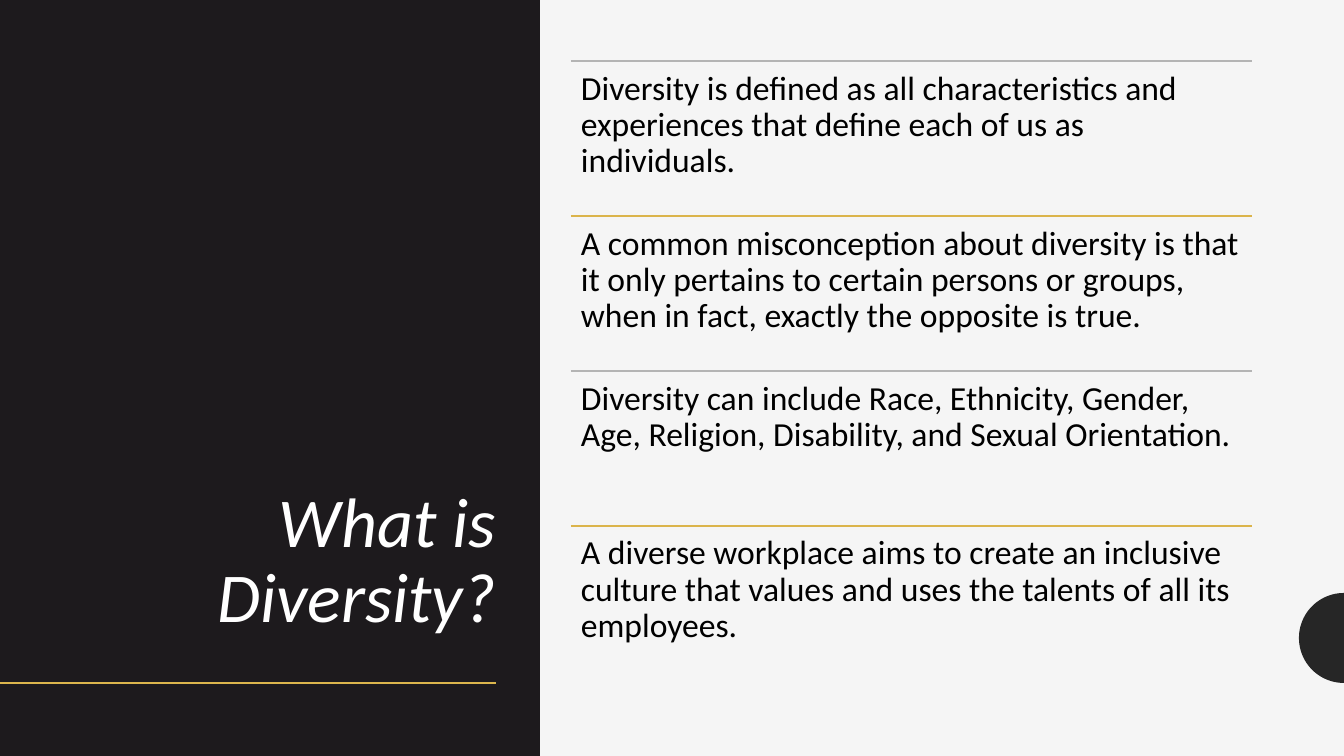
from dataclasses import dataclass
from math import cos, pi, sin

from lxml.etree import SubElement
from pptx import Presentation
from pptx.dml.color import RGBColor
from pptx.enum.shapes import MSO_CONNECTOR, MSO_SHAPE
from pptx.enum.text import MSO_ANCHOR, PP_ALIGN
from pptx.oxml.ns import qn
from pptx.util import Pt

EMU_PER_PX = 914400 / 100.8


def px(length):
    return round(length * EMU_PER_PX)


def rgb(value):
    return RGBColor.from_string(value)


def apply(target, values):
    for name, value in values.items():
        setattr(target, name, value)


@dataclass(frozen=True)
class Theme:
    background: str = "F5F5F5"
    panel: str = "1D1A1D"
    accent: str = "262626"
    gold: str = "DCB64D"
    divider_grey: str = "B4B4B4"
    divider_gold: str = "DBB44B"
    title_text: str = "FFFFFF"
    body_text: str = "000000"
    font: str = "Calibri"
    title_size: int = 50
    body_size: int = 24
    line_spacing: float = 0.9


class SlideBuilder:
    def __init__(self, slide, theme):
        self.slide = slide
        self.theme = theme
        slide.background.fill.solid()
        slide.background.fill.fore_color.rgb = rgb(theme.background)

    def paint(self, shape, color):
        shape.shadow.inherit = False
        shape.fill.solid()
        shape.fill.fore_color.rgb = rgb(color)
        shape.line.fill.background()

    def rectangle(self, left, top, width, height, color):
        box = map(px, (left, top, width, height))
        self.paint(self.slide.shapes.add_shape(MSO_SHAPE.RECTANGLE, *box), color)

    def left_half_disc(self, center_x, center_y, radius, color, steps=48):
        angles = [pi / 2 + pi * step / steps for step in range(steps + 1)]
        rim = [(px(center_x + radius * cos(angle)), px(center_y + radius * sin(angle)))
               for angle in angles]
        outline = self.slide.shapes.build_freeform(*rim[0], scale=1.0)
        outline.add_line_segments(rim[1:], close=True)
        self.paint(outline.convert_to_shape(), color)

    def rule(self, left, right, y, color, weight):
        ends = map(px, (left, y, right, y))
        rule = self.slide.shapes.add_connector(MSO_CONNECTOR.STRAIGHT, *ends)
        rule.line.color.rgb = rgb(color)
        rule.line.width = Pt(weight)
        SubElement(rule._element.spPr, qn("a:effectLst"))

    def text(self, left, top, width, height, wording, size, color, inset_y,
             anchor=MSO_ANCHOR.TOP, align=PP_ALIGN.LEFT, italic=False):
        box = self.slide.shapes.add_textbox(*map(px, (left, top, width, height)))
        frame = box.text_frame
        apply(frame, {
            "word_wrap": True, "vertical_anchor": anchor,
            "margin_left": px(10), "margin_right": px(10),
            "margin_top": px(inset_y), "margin_bottom": px(inset_y),
        })
        paragraph = frame.paragraphs[0]
        apply(paragraph, {"alignment": align, "line_spacing": self.theme.line_spacing})
        run = paragraph.add_run()
        run.text = wording
        apply(run.font, {"name": self.theme.font, "size": Pt(size), "italic": italic})
        run.font.color.rgb = rgb(color)


STATEMENTS = [
    "Diversity is defined as all characteristics and experiences that define each of us "
    "as individuals.",
    "A common misconception about diversity is that it only pertains to certain persons "
    "or groups, when in fact, exactly the opposite is true.",
    "Diversity can include Race, Ethnicity, Gender, Age, Religion, Disability, and "
    "Sexual Orientation.",
    "A diverse workplace aims to create an inclusive culture that values and uses the "
    "talents of all its employees.",
]


def main():
    theme = Theme()
    deck = Presentation()
    apply(deck, {"slide_width": px(1344), "slide_height": px(756)})
    builder = SlideBuilder(deck.slides.add_slide(deck.slide_layouts[6]), theme)

    # Edge accent and dark title panel
    builder.left_half_disc(1344, 638, 45, theme.accent)
    builder.rectangle(0, 0, 540, 756, theme.panel)
    builder.rule(0, 496, 683, theme.gold, 2)
    builder.text(84, 61, 422, 582, "What is Diversity?", theme.title_size,
                 theme.title_text, 5, MSO_ANCHOR.BOTTOM, PP_ALIGN.RIGHT, True)

    # Statements, each under a divider of alternating colour
    left, width, first_top, pitch = 571, 681, 61, 155
    dividers = (theme.divider_grey, theme.divider_gold)
    for row, statement in enumerate(STATEMENTS):
        top = first_top + row * pitch
        builder.rule(left, left + width, top, dividers[row % 2], 1)
        builder.text(left, top, width, pitch, statement, theme.body_size,
                     theme.body_text, 10)

    deck.save("out.pptx")


if __name__ == "__main__":
    main()
